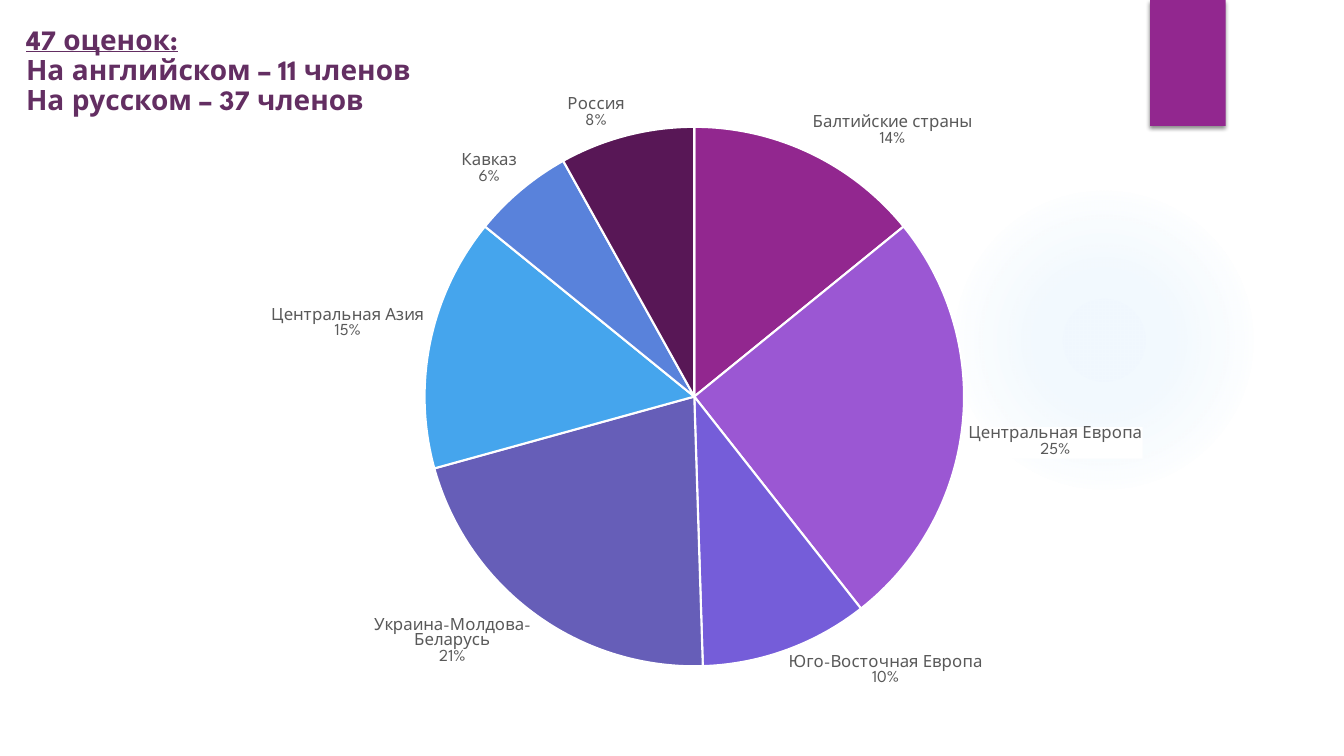
from lxml import etree
from pptx import Presentation
from pptx.chart.data import CategoryChartData
from pptx.dml.color import RGBColor
from pptx.enum import chart as ch, shapes, text
from pptx.oxml import parse_xml
from pptx.oxml.ns import nsdecls, qn
from pptx.util import Pt

FONT = "League Spartan"
WHITE = RGBColor(0xFF, 0xFF, 0xFF)
GREY = RGBColor(0x59, 0x59, 0x59)
PLUM = RGBColor(0x63, 0x2E, 0x62)
MAGENTA = RGBColor(0x92, 0x27, 0x8F)
SKY = RGBColor(0x45, 0xA5, 0xED)

REGIONS = [
    ("Балтийские страны", 14, MAGENTA),
    ("Центральная Европа", 25, RGBColor(0x9B, 0x57, 0xD3)),
    ("Юго-Восточная Европа", 10, RGBColor(0x75, 0x5D, 0xD9)),
    ("Украина-Молдова-Беларусь", 21, RGBColor(0x66, 0x5E, 0xB8)),
    ("Центральная Азия", 15, SKY),
    ("Кавказ", 6, RGBColor(0x59, 0x82, 0xDB)),
    ("Россия", 8, RGBColor(0x58, 0x17, 0x56)),
]


def points(box):
    return [Pt(v) for v in box]


def set_font(font, size, color, bold=False, underline=False):
    font.name, font.size, font.bold = FONT, Pt(size), bold
    font.underline = underline
    font.color.rgb = color


def add_run(p, words, **fmt):
    r = p.add_run()
    r.text = words
    set_font(r.font, **fmt)


def add_shape(slide, kind, box):
    sp = slide.shapes.add_shape(kind, *points(box))
    sp.shadow.inherit = False
    sp.line.fill.background()
    return sp


def add_glow(slide, box):
    """Pale disc that fades out towards its rim."""
    sp = add_shape(slide, shapes.MSO_SHAPE.OVAL, box)
    sp.fill.background()
    stops = "".join(
        f'<a:gs pos="{pos * 1000}"><a:srgbClr val="{SKY}">'
        f'<a:alpha val="{alpha * 1000}"/></a:srgbClr></a:gs>'
        for pos, alpha in ((0, 7), (36, 6), (69, 0)))
    grad = parse_xml(
        f'<a:gradFill {nsdecls("a")} rotWithShape="1"><a:gsLst>{stops}</a:gsLst>'
        '<a:path path="circle"><a:fillToRect l="50000" t="50000" r="50000" b="50000"/>'
        '</a:path></a:gradFill>')
    sp_pr = sp._element.spPr
    sp_pr.replace(sp_pr.find(qn("a:noFill")), grad)


def add_tab(slide, box):
    """Coloured tab with a soft shadow below it."""
    sp = add_shape(slide, shapes.MSO_SHAPE.RECTANGLE, box)
    sp.fill.solid()
    sp.fill.fore_color.rgb = MAGENTA
    sp._element.spPr.find(qn("a:effectLst")).append(parse_xml(
        f'<a:outerShdw {nsdecls("a")} blurRad="{Pt(3)}" dist="{Pt(2)}" dir="5400000"'
        ' algn="ctr" rotWithShape="0"><a:srgbClr val="000000"><a:alpha val="45000"/>'
        '</a:srgbClr></a:outerShdw>'))


def add_title(slide, box):
    tf = slide.shapes.add_textbox(*points(box)).text_frame
    tf.word_wrap = True
    tf.vertical_anchor = text.MSO_ANCHOR.MIDDLE
    p = tf.paragraphs[0]
    p.line_spacing = 0.9
    fmt = dict(size=20, color=PLUM, bold=True)
    add_run(p, "47 оценок:", underline=True, **fmt)
    for line in ("На английском – 11 членов", "На русском – 37 членов"):
        p.add_line_break()
        add_run(p, line, **fmt)


def set_plot_layout(chart, **fractions):
    """Fix the inner plot area as fractions of the chart box."""
    area = chart._chartSpace.chart.plotArea
    for old in area.findall(qn("c:layout")):
        area.remove(old)
    layout = etree.Element(qn("c:layout"))
    manual = etree.SubElement(layout, qn("c:manualLayout"))
    modes = dict(layoutTarget="inner", xMode="edge", yMode="edge")
    for tag, val in {**modes, **fractions}.items():
        etree.SubElement(manual, qn(f"c:{tag}")).set("val", str(val))
    area.insert(0, layout)


def add_region_pie(slide, box):
    data = CategoryChartData()
    data.categories = [name for name, _, _ in REGIONS]
    data.add_series("Series 1", [value for _, value, _ in REGIONS])
    chart = slide.shapes.add_chart(ch.XL_CHART_TYPE.PIE, *points(box), data).chart
    chart.has_legend = chart.has_title = False
    set_font(chart.font, 10, RGBColor(0, 0, 0))
    set_plot_layout(chart, x=0.28, y=0.07, w=0.48, h=0.86)

    plot = chart.plots[0]
    plot.vary_by_categories = True
    series = plot.series[0]
    for i, (_, _, color) in enumerate(REGIONS):
        fmt = series.points[i].format
        fmt.fill.solid()
        fmt.fill.fore_color.rgb = color
        fmt.line.color.rgb = WHITE
        fmt.line.width = Pt(1.5)

    labels = series.data_labels
    labels.show_category_name = labels.show_percentage = True
    labels.show_value = False
    labels.number_format, labels.number_format_is_linked = "0%", False
    labels.position = ch.XL_LABEL_POSITION.OUTSIDE_END
    set_font(labels.font, 12, GREY)
    d_lbls = labels._element
    d_lbls.find(qn("c:txPr")).addprevious(parse_xml(
        f'<c:spPr {nsdecls("c", "a")}><a:solidFill><a:srgbClr val="{WHITE}"/>'
        '</a:solidFill></c:spPr>'))
    separator = etree.Element(qn("c:separator"))
    separator.text = "\n"
    d_lbls.find(qn("c:showBubbleSize")).addnext(separator)


def main():
    prs = Presentation()
    prs.slide_width, prs.slide_height = Pt(960), Pt(540)
    slide = prs.slides.add_slide(prs.slide_layouts[6])
    add_glow(slide, (677.5, 131.8, 221.8, 221.8))
    add_tab(slide, (821.5, 0, 54, 90))
    add_title(slide, (11.5, 9.4, 303, 82.8))
    add_region_pie(slide, (78.5, 58.3, 802.8, 450))
    prs.save("out.pptx")


if __name__ == "__main__":
    main()
